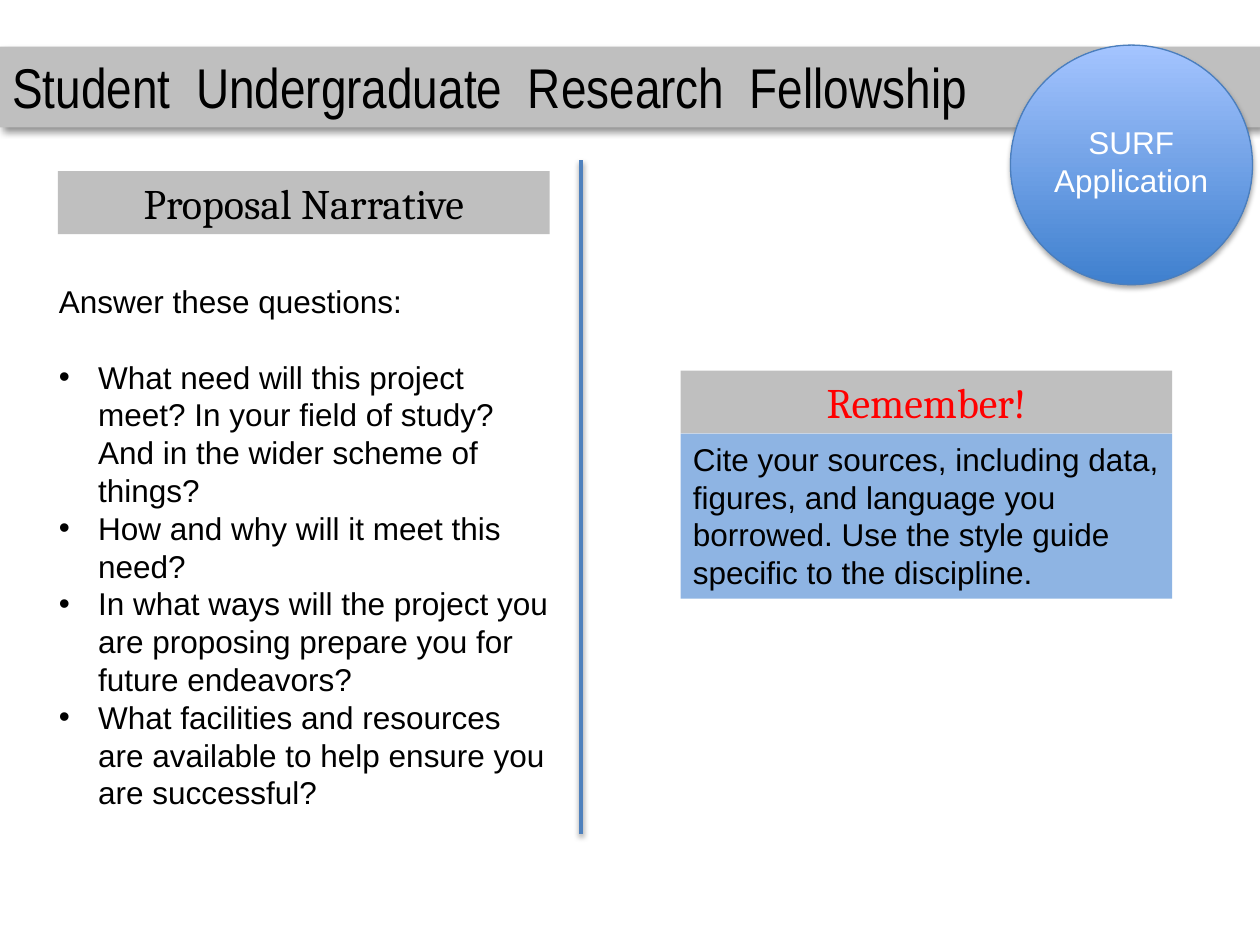
import pptx
import pptx.util
import pptx.dml.color
import pptx.enum.shapes
import pptx.enum.text
import pptx.oxml
import pptx.oxml.ns

Cm = pptx.util.Cm
Pt = pptx.util.Pt
RGB = pptx.dml.color.RGBColor
KIND = pptx.enum.shapes.MSO_SHAPE
ALIGN = pptx.enum.text.PP_ALIGN
FIT = pptx.enum.text.MSO_AUTO_SIZE.SHAPE_TO_FIT_TEXT
TOP = pptx.enum.text.MSO_ANCHOR.TOP

BLACK = RGB(0x00, 0x00, 0x00)
WHITE = RGB(0xFF, 0xFF, 0xFF)
RED = RGB(0xFF, 0x00, 0x00)
GREY = RGB(0xBF, 0xBF, 0xBF)
SKY = RGB(0x8E, 0xB4, 0xE3)
DEEP = RGB(0x3F, 0x80, 0xCE)
PALE = RGB(0xA4, 0xC4, 0xFF)
EDGE = RGB(0x4B, 0x7E, 0xBC)
BLUE = RGB(0x4F, 0x81, 0xBD)


def write(shape, lines, font, size, color, align=ALIGN.LEFT):
    frame = shape.text_frame
    frame.word_wrap = True
    frame.auto_size = FIT
    frame.vertical_anchor = TOP
    frame.text = "\n".join(lines)
    for para in frame.paragraphs:
        para.alignment = align
        for run in para.runs:
            run.font.name = font
            run.font.size = Pt(size)
            run.font.color.rgb = color


def shade(shape, alpha, blur, dist, angle):
    props = shape._element.spPr
    for old in props.findall(pptx.oxml.ns.qn("a:effectLst")):
        props.remove(old)
    props.append(pptx.oxml.parse_xml(
        f'<a:effectLst {pptx.oxml.ns.nsdecls("a")}>'
        f'<a:outerShdw blurRad="{Pt(blur)}" dist="{Pt(dist)}" dir="{angle * 60000}" '
        f'algn="tl" rotWithShape="0"><a:srgbClr val="000000">'
        f'<a:alpha val="{alpha * 1000}"/></a:srgbClr></a:outerShdw></a:effectLst>'))


deck = pptx.Presentation()
deck.slide_width = Cm(25.4)
deck.slide_height = Cm(19.05)
slide = deck.slides.add_slide(deck.slide_layouts[6])
shapes = slide.shapes

# Title band
band = shapes.add_shape(KIND.RECTANGLE, 0, Cm(0.94), Cm(25.4), Cm(1.63))
band.fill.solid()
band.fill.fore_color.rgb = GREY
band.line.fill.background()
shade(band, 43, 4, 3, 45)
write(band, ["Student  Undergraduate  Research  Fellowship"], "Arial Narrow", 32, BLACK)

# Round badge and its label
badge = shapes.add_shape(KIND.FLOWCHART_CONNECTOR, Cm(20.37), Cm(0.91), Cm(4.88), Cm(4.83))
badge.fill.gradient()
badge.fill.gradient_angle = 90
for stop, color in zip(badge.fill.gradient_stops, (DEEP, PALE)):
    stop.color.rgb = color
badge.fill.gradient_stops[0].position = 0
badge.fill.gradient_stops[1].position = 1
badge.line.color.rgb = EDGE
badge.line.width = Pt(0.75)
shade(badge, 35, 3.1, 1.8, 90)
label = shapes.add_textbox(Cm(20.57), Cm(2.36), Cm(4.47), Cm(1.8))
write(label, ["SURF Application"], "Arial", 18, WHITE, ALIGN.CENTER)

# Column divider
rule = shapes.add_connector(pptx.enum.shapes.MSO_CONNECTOR.STRAIGHT,
                            Cm(11.71), Cm(3.23), Cm(11.71), Cm(16.81))
rule.line.color.rgb = BLUE
rule.line.width = Pt(2)
shade(rule, 38, 3.1, 1.6, 90)

# Column headings and the reminder
cite = ("Cite your sources, including data, figures, and language you borrowed. "
        "Use the style guide specific to the discipline.")
boxes = [
    (13.72, 7.47, 1.27, GREY, "Remember!", "Cambria", 24, RED, ALIGN.CENTER),
    (13.72, 8.74, 3.33, SKY, cite, "Arial", 18, BLACK, ALIGN.LEFT),
    (1.17, 3.45, 1.27, GREY, "Proposal Narrative", "Cambria", 24, BLACK, ALIGN.CENTER),
]
for left, top, height, fill, text, font, size, color, align in boxes:
    box = shapes.add_shape(KIND.RECTANGLE, Cm(left), Cm(top), Cm(9.91), Cm(height))
    box.shadow.inherit = False
    box.fill.solid()
    box.fill.fore_color.rgb = fill
    box.line.fill.background()
    write(box, [text], font, size, color, align)

# Questions
asks = [
    "What need will this project meet? In your field of study? "
    "And in the wider scheme of things?",
    "How and why will it meet this need?",
    "In what ways will the project you are proposing prepare you for future endeavors?",
    "What facilities and resources are available to help ensure you are successful?",
]
body = shapes.add_textbox(Cm(0.94), Cm(5.56), Cm(10.44), Cm(11.79))
write(body, ["Answer these questions:"] + asks, "Arial", 18, BLACK)
first, *rest = body.text_frame.paragraphs
first.space_after = Pt(21.6)
for para in rest:
    props = para._p.get_or_add_pPr()
    props.set("marL", str(Cm(0.79)))
    props.set("indent", str(-Cm(0.79)))
    props.append(pptx.oxml.parse_xml(
        f'<a:buFont {pptx.oxml.ns.nsdecls("a")} typeface="Arial"/>'))
    props.append(pptx.oxml.parse_xml(
        f'<a:buChar {pptx.oxml.ns.nsdecls("a")} char="•"/>'))

deck.save("out.pptx")
